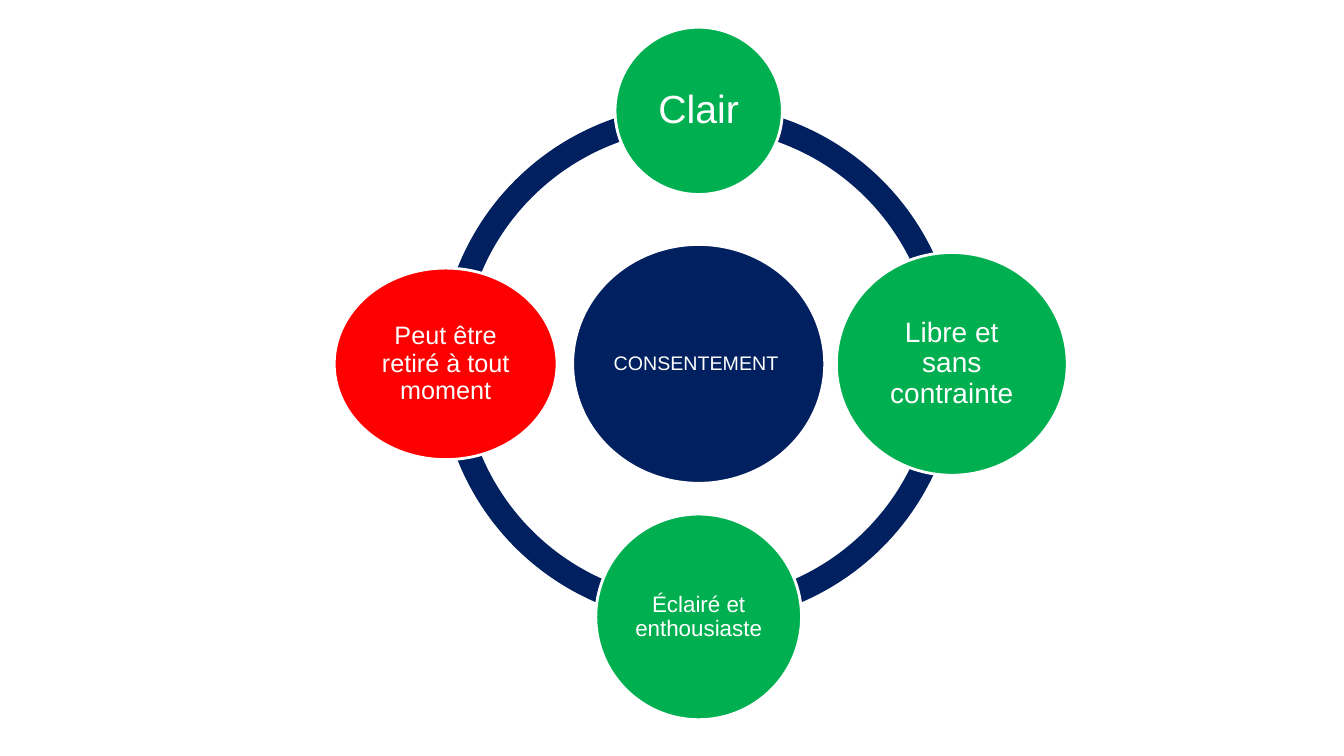
from dataclasses import dataclass

from pptx import Presentation
from pptx.dml import color
from pptx.enum import shapes, text
from pptx.shapes import autoshape
from pptx.slide import Slide
from pptx.util import Inches, Pt

COLOURS = {"navy": "002060", "green": "00B050", "red": "FF0000", "white": "FFFFFF"}
CENTRE_X, CENTRE_Y = 6.93, 3.61
RING_SIZE = 5.15
RING_THICKNESS = 0.046
ORBIT = 2.51


@dataclass(frozen=True)
class Bubble:
    """A labelled ellipse; across and down count orbits from the centre."""
    label: str
    across: int
    down: int
    width: float
    height: float
    fill: str
    size: int
    inset: float


BUBBLES = [
    Bubble("CONSENTEMENT ", 0, 0, 2.5, 2.37, "navy", 14, 0.02),
    Bubble("Clair", 0, -1, 1.66, 1.66, "green", 28, 0.04),
    Bubble("Libre et sans contrainte", 1, 0, 2.29, 2.21, "green", 20, 0.03),
    Bubble("Éclairé et enthousiaste", 0, 1, 2.04, 2.04, "green", 16, 0.02),
    Bubble("Peut être retiré à tout moment", -1, 0, 2.21, 1.9, "red", 18, 0.03),
]


def rgb(name: str) -> color.RGBColor:
    return color.RGBColor.from_string(COLOURS[name])


def apply(target: object, values: dict) -> None:
    for name, value in values.items():
        setattr(target, name, value)


def add_centred_shape(page: Slide, kind: shapes.MSO_SHAPE, x: float, y: float,
                      width: float, height: float, fill: str) -> autoshape.Shape:
    shape = page.shapes.add_shape(kind, Inches(x - width / 2), Inches(y - height / 2),
                                  Inches(width), Inches(height))
    shape.shadow.inherit = False
    shape.fill.solid()
    shape.fill.fore_color.rgb = rgb(fill)
    return shape


def add_ring(page: Slide) -> None:
    """Draw the ring as four quarter arcs."""
    for start in (180, 90, 0, 270):
        arc = add_centred_shape(page, shapes.MSO_SHAPE.BLOCK_ARC, CENTRE_X, CENTRE_Y,
                                RING_SIZE, RING_SIZE, "navy")
        arc.line.fill.background()
        # Angles are stored in 1/60000 degree, adjustments are in units of 100000
        for index, angle in enumerate((start, (start + 90) % 360)):
            arc.adjustments[index] = angle * 0.6
        arc.adjustments[2] = RING_THICKNESS


def add_bubble(page: Slide, bubble: Bubble) -> None:
    ellipse = add_centred_shape(page, shapes.MSO_SHAPE.OVAL,
                                CENTRE_X + bubble.across * ORBIT,
                                CENTRE_Y + bubble.down * ORBIT,
                                bubble.width, bubble.height, bubble.fill)
    ellipse.line.color.rgb = rgb("white")
    ellipse.line.width = Pt(2)
    frame = ellipse.text_frame
    apply(frame, {"word_wrap": True, "vertical_anchor": text.MSO_ANCHOR.MIDDLE})
    apply(frame, {f"margin_{side}": Inches(bubble.inset)
                  for side in ("left", "top", "right", "bottom")})
    para = frame.paragraphs[0]
    apply(para, {"alignment": text.PP_ALIGN.CENTER, "line_spacing": 0.9})
    span = para.add_run()
    span.text = bubble.label
    apply(span.font, {"name": "Arial", "size": Pt(bubble.size)})
    span.font.color.rgb = rgb("white")


def main() -> None:
    deck = Presentation()
    apply(deck, {"slide_width": Inches(13.33), "slide_height": Inches(7.5)})
    page = deck.slides.add_slide(deck.slide_layouts[6])
    add_ring(page)
    for bubble in BUBBLES:
        add_bubble(page, bubble)
    deck.save("out.pptx")


if __name__ == "__main__":
    main()
